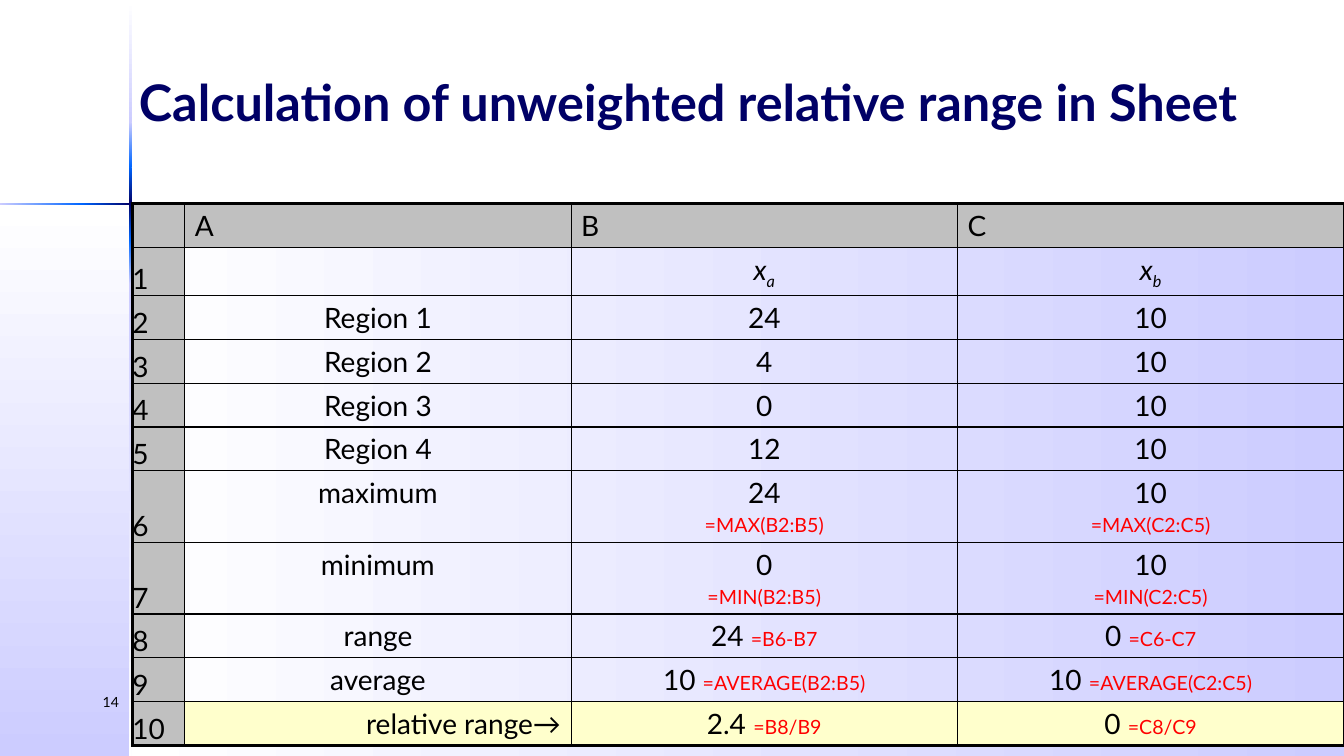
"""Build the slide on the unweighted relative range: a spreadsheet over a gradient backdrop."""
import dataclasses
import itertools

import lxml.etree
import pptx
import pptx.dml.color
import pptx.enum.shapes
import pptx.enum.text
import pptx.oxml.ns
import pptx.util

Pt = pptx.util.Pt
ALIGN = pptx.enum.text.PP_ALIGN
ANCHOR = pptx.enum.text.MSO_ANCHOR
qn = pptx.oxml.ns.qn


@dataclasses.dataclass(frozen=True)
class Theme:
    """Colours, font and sizes of the slide."""
    font: str = "Lato"
    ink: str = "000000"
    navy: str = "000066"
    blue: str = "0066FF"
    lilac: str = "CCCCFF"
    white: str = "FFFFFF"
    header: str = "C0C0C0"
    highlight: str = "FFFFCC"
    formula: str = "FF0000"
    title_size: float = 36
    cell_size: float = 20
    formula_size: float = 14
    number_size: float = 10
    thin: float = 1
    thick: float = 2.25


THEME = Theme()
TITLE = "Calculation of unweighted relative range in Sheet"
PAGE_NUMBER = "14"
COLUMN_LETTERS = ["A", "B", "C"]
SYMBOLS = ["a", "b"]
REGIONS = [
    ("Region 1", "24", "10"),
    ("Region 2", "4", "10"),
    ("Region 3", "0", "10"),
    ("Region 4", "12", "10"),
]
EXTREMES = [
    ("maximum", "24", "10", "=MAX({0}2:{0}5)"),
    ("minimum", "0", "10", "=MIN({0}2:{0}5)"),
]
RESULTS = [
    ("range", "24", "0", "={0}6-{0}7"),
    ("average", "10", "10", "=AVERAGE({0}2:{0}5)"),
    ("relative range→", "2.4", "0", "={0}8/{0}9"),
]

WIDTH, HEIGHT = 960, 540
CROSS_X, CROSS_Y = 93, 145.5
SHEET_X = 94.5
INDEX_WIDTH = 37.5
ROW_HEIGHTS = [31.2, 34.2] + [31.2] * 4 + [51.2] * 2 + [31.2] * 3
VERTICAL_STOPS = [0.7, 87, 119, 171.5, 203, HEIGHT]
HORIZONTAL_STOPS = [0, 58.3, 128, 170, WIDTH]
GLOW = [
    (THEME.white, THEME.lilac),
    (THEME.lilac, THEME.blue),
    (THEME.blue, THEME.navy, THEME.blue),
    (THEME.blue, THEME.lilac),
    (THEME.lilac, THEME.white),
]


def write(paragraph, text, size=THEME.cell_size, color=THEME.ink, bold=False, italic=False, baseline=0):
    """Add one formatted run."""
    run = paragraph.add_run()
    run.text = text
    run.font.name = THEME.font
    run.font.size = Pt(size)
    run.font.bold = bold
    run.font.italic = italic
    run.font.color.rgb = pptx.dml.color.RGBColor.from_string(color)
    if baseline:
        run.font._element.set("baseline", str(baseline))


def gradient_box(slide, left, top, width, height, colors, downward):
    """Draw a borderless rectangle with evenly spaced gradient stops."""
    box = slide.shapes.add_shape(
        pptx.enum.shapes.MSO_SHAPE.RECTANGLE, Pt(left), Pt(top), Pt(width), Pt(height))
    box.shadow.inherit = False
    box.line.fill.background()
    box.fill.gradient()
    box.fill.gradient_angle = 270 if downward else 0
    stops = box._element.xpath(".//a:gsLst")[0]
    for stop in list(stops):
        stops.remove(stop)
    for i, color in enumerate(colors):
        stop = lxml.etree.SubElement(stops, qn("a:gs"), pos=str(100000 * i // (len(colors) - 1)))
        lxml.etree.SubElement(stop, qn("a:srgbClr"), val=color)


def draw_backdrop(slide):
    """Draw the two panels and the glowing cross."""
    pale = (THEME.white, THEME.lilac)
    panel_height = HEIGHT - CROSS_Y
    gradient_box(slide, CROSS_X, CROSS_Y, WIDTH - CROSS_X, panel_height, pale, False)
    gradient_box(slide, 0, CROSS_Y, CROSS_X, panel_height, pale, True)
    for (start, end), colors in zip(itertools.pairwise(VERTICAL_STOPS), GLOW):
        gradient_box(slide, CROSS_X - 1, start, 2, end - start, colors, True)
    for (start, end), colors in zip(itertools.pairwise(HORIZONTAL_STOPS), GLOW[1:]):
        gradient_box(slide, start, CROSS_Y - 0.75, end - start, 1.5, colors, False)


def style_cell(cell, row, column, last_row, last_column):
    """Set borders, fill, insets and anchor from the place in the sheet."""
    properties = cell._tc.get_or_add_tcPr()
    edges = {"L": column == 0, "R": column == last_column, "T": row == 0, "B": row == last_row}
    for side, outer in edges.items():
        width = Pt(THEME.thick if outer else THEME.thin)
        line = lxml.etree.SubElement(properties, qn(f"a:ln{side}"), w=str(width))
        paint = lxml.etree.SubElement(line, qn("a:solidFill"))
        lxml.etree.SubElement(paint, qn("a:srgbClr"), val=THEME.ink)
    if row == 0 or column == 0 or row == last_row:
        color = THEME.header if row == 0 or column == 0 else THEME.highlight
        cell.fill.solid()
        cell.fill.fore_color.rgb = pptx.dml.color.RGBColor.from_string(color)
    else:
        cell.fill.background()
    index = column == 0 and row > 0
    cell.margin_left = cell.margin_right = Pt(0 if index else 7.2)
    cell.margin_top = cell.margin_bottom = Pt(0 if index else 3.6)
    cell.vertical_anchor = ANCHOR.BOTTOM if index else ANCHOR.MIDDLE if row == 0 else ANCHOR.TOP


def build_sheet(slide):
    """Add the spreadsheet and fill its cells."""
    last_row, last_column = len(ROW_HEIGHTS) - 1, len(COLUMN_LETTERS)
    frame = slide.shapes.add_table(
        last_row + 1, last_column + 1, Pt(SHEET_X), Pt(CROSS_Y),
        Pt(WIDTH - SHEET_X), Pt(sum(ROW_HEIGHTS)))
    sheet = frame.table
    sheet.first_row = sheet.horz_banding = False
    frame._element.xpath(".//a:tableStyleId")[0].text = "{2D5ABB26-0587-4C30-8999-92F81FD0307C}"
    data_width = (WIDTH - SHEET_X - INDEX_WIDTH) / last_column
    for column, width in zip(sheet.columns, [INDEX_WIDTH] + [data_width] * last_column):
        column.width = Pt(width)
    for row, height in enumerate(ROW_HEIGHTS):
        sheet.rows[row].height = Pt(height)
        for column in range(last_column + 1):
            style_cell(sheet.cell(row, column), row, column, last_row, last_column)
        if row:
            write(sheet.cell(row, 0).text_frame.paragraphs[0], str(row))

    def first_line(row, column, align=ALIGN.CENTER):
        paragraph = sheet.cell(row, column).text_frame.paragraphs[0]
        paragraph.alignment = align
        return paragraph

    for column, letter in enumerate(COLUMN_LETTERS, 1):
        write(first_line(0, column, ALIGN.LEFT), letter)
    for column, symbol in enumerate(SYMBOLS, 2):
        line = first_line(1, column)
        write(line, "x", italic=True)
        write(line, symbol, italic=True, baseline=-25000)
    for row, region in enumerate(REGIONS, 2):
        for column, entry in enumerate(region, 1):
            write(first_line(row, column), entry)
    for row, (label, *values, formula) in enumerate(EXTREMES + RESULTS, 2 + len(REGIONS)):
        write(first_line(row, 1, ALIGN.RIGHT if row == last_row else ALIGN.CENTER), label)
        stacked = row < 2 + len(REGIONS) + len(EXTREMES)
        for column, value in enumerate(values, 2):
            line = first_line(row, column)
            write(line, value if stacked else value + " ")
            if stacked:
                line = sheet.cell(row, column).text_frame.add_paragraph()
                line.alignment = ALIGN.CENTER
                line.space_before = Pt(2.8)
            write(line, formula.format(COLUMN_LETTERS[column - 1]), THEME.formula_size, THEME.formula)


def main():
    """Assemble and save the slide."""
    deck = pptx.Presentation()
    deck.slide_width, deck.slide_height = Pt(WIDTH), Pt(HEIGHT)
    slide = deck.slides.add_slide(deck.slide_layouts[5])
    draw_backdrop(slide)
    page = slide.shapes.add_textbox(Pt(0), Pt(492), Pt(92), Pt(36)).text_frame
    page.word_wrap = True
    page.paragraphs[0].alignment = ALIGN.RIGHT
    write(page.paragraphs[0], PAGE_NUMBER, THEME.number_size)
    heading = slide.shapes.title
    heading.left, heading.top = Pt(92), Pt(0)
    heading.width, heading.height = Pt(WIDTH - 92), Pt(CROSS_Y)
    heading.text_frame.vertical_anchor = ANCHOR.MIDDLE
    heading.text_frame.paragraphs[0].alignment = ALIGN.LEFT
    write(heading.text_frame.paragraphs[0], TITLE, THEME.title_size, THEME.navy, bold=True)
    build_sheet(slide)
    deck.save("out.pptx")


if __name__ == "__main__":
    main()
